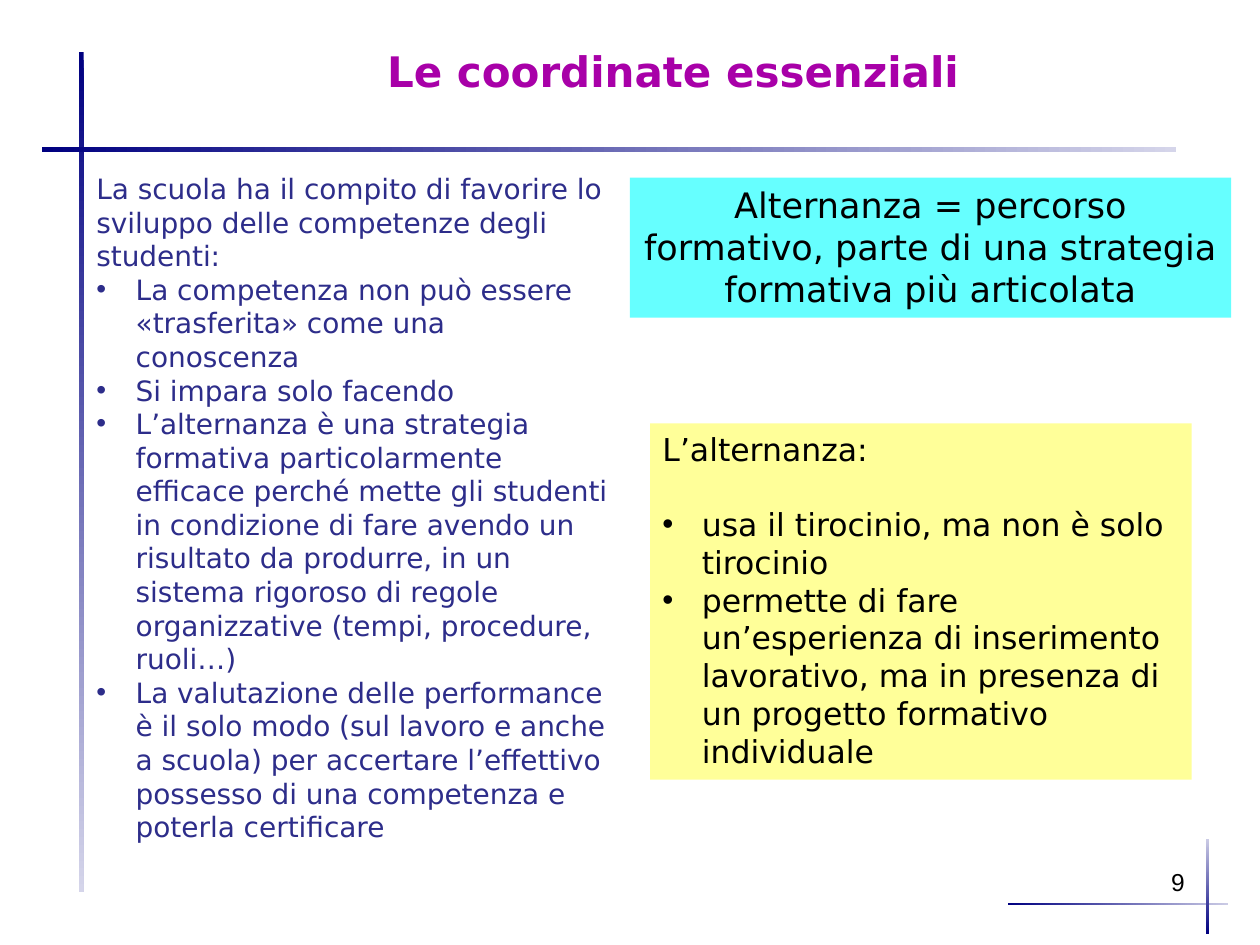
from lxml.etree import SubElement
from pptx import Presentation
from pptx.dml.color import RGBColor
from pptx.enum.shapes import MSO_SHAPE as Shape
from pptx.enum.text import MSO_ANCHOR as Anchor, PP_ALIGN as Align
from pptx.oxml.ns import qn
from pptx.util import Pt

FONT = "DejaVu Sans"
NAVY, MIST, HAZE = "000080", "D5D5EA", "CBCBE5"
PURPLE, INDIGO, BLACK = "A800A8", "2D2D8A", "000000"
INDENT = 22.5

TITLE = "Le coordinate essenziali"
SCHOOL_INTRO = "La scuola ha il compito di favorire lo sviluppo delle competenze degli studenti:"
SCHOOL_POINTS = [
    "La competenza non può essere «trasferita» come una conoscenza",
    "Si impara solo facendo",
    "L’alternanza è una strategia formativa particolarmente efficace perché mette gli "
    "studenti in condizione di fare avendo un risultato da produrre, in un sistema "
    "rigoroso di regole organizzative (tempi, procedure, ruoli…)",
    "La valutazione delle performance è il solo modo (sul lavoro e anche a scuola) per "
    "accertare l’effettivo possesso di una competenza e poterla certificare",
]
DEFINITION = "Alternanza = percorso formativo, parte di una strategia formativa più articolata"
WORK_INTRO = "L’alternanza:"
WORK_POINTS = [
    "usa il tirocinio, ma non è solo tirocinio",
    "permette di fare un’esperienza di inserimento lavorativo, ma in presenza di un "
    "progetto formativo individuale",
]
# left, top, width, height, start colour, end colour
RULES = [
    (45, 29.75, 2.75, 480, NAVY, MIST),
    (576, 516, 126, 1.25, NAVY, HAZE),
    (689.25, 479.5, 1.75, 54, HAZE, NAVY),
    (24, 84, 648, 2.75, NAVY, MIST),
]


def rgb(code):
    return RGBColor.from_string(code)


def add_rectangle(slide, box):
    rectangle = slide.shapes.add_shape(Shape.RECTANGLE, *map(Pt, box))
    rectangle.shadow.inherit = False
    rectangle.line.fill.background()
    return rectangle


def add_rule(slide, box, start, end):
    """Draw a thin bar that fades along its longer side."""
    fill = add_rectangle(slide, box).fill
    fill.gradient()
    fill.gradient_angle = 0 if box[2] > box[3] else 270
    for stop, color in zip(fill.gradient_stops, (start, end)):
        stop.color.rgb = rgb(color)


def add_bullet(paragraph):
    properties = paragraph._p.get_or_add_pPr()
    properties.set("marL", str(Pt(INDENT)))
    properties.set("indent", str(-Pt(INDENT)))
    SubElement(properties, qn("a:buFont"), typeface="Arial")
    SubElement(properties, qn("a:buChar"), char="•")


def write(shape, intro, size, color, points=(), gap=0, align=Align.LEFT, font=FONT, bold=False):
    """Fill a shape with an intro, then bullets set off from it by a gap."""
    frame = shape.text_frame
    frame.word_wrap = True
    frame.vertical_anchor = Anchor.TOP
    frame.text = "\n".join([intro, *points])
    for index, paragraph in enumerate(frame.paragraphs):
        if index:
            add_bullet(paragraph)
        if index == 1 and gap:
            paragraph.space_before = Pt(gap)
        paragraph.alignment = align
        paragraph.font.name = font
        paragraph.font.size = Pt(size)
        paragraph.font.bold = bold
        paragraph.font.color.rgb = rgb(color)


def add_panel(slide, box, color):
    panel = add_rectangle(slide, box)
    panel.fill.solid()
    panel.fill.fore_color.rgb = rgb(color)
    return panel


def main():
    deck = Presentation()
    deck.slide_width, deck.slide_height = Pt(720), Pt(540)
    slide = deck.slides.add_slide(deck.slide_layouts[5])

    for *box, start, end in RULES:
        add_rule(slide, box, start, end)

    title = slide.shapes.title
    title.left, title.top, title.width, title.height = map(Pt, (214, 22.5, 456, 36.5))
    write(title, TITLE, 24, PURPLE, bold=True)

    definition = add_panel(slide, (360, 101.5, 343.5, 80), "66FFFF")
    write(definition, DEFINITION, 20, BLACK, align=Align.CENTER)

    work = add_panel(slide, (371.5, 242, 309.5, 203.5), "FFFF99")
    write(work, WORK_INTRO, 18, BLACK, WORK_POINTS, gap=21.5)

    school = slide.shapes.add_textbox(*map(Pt, (48, 94.5, 307.5, 395.5)))
    write(school, SCHOOL_INTRO, 16, INDIGO, SCHOOL_POINTS)

    page_number = slide.shapes.add_textbox(*map(Pt, (516, 492, 168, 37.5)))
    write(page_number, "9", 14, BLACK, align=Align.RIGHT, font="Arial")

    deck.save("out.pptx")


if __name__ == "__main__":
    main()
